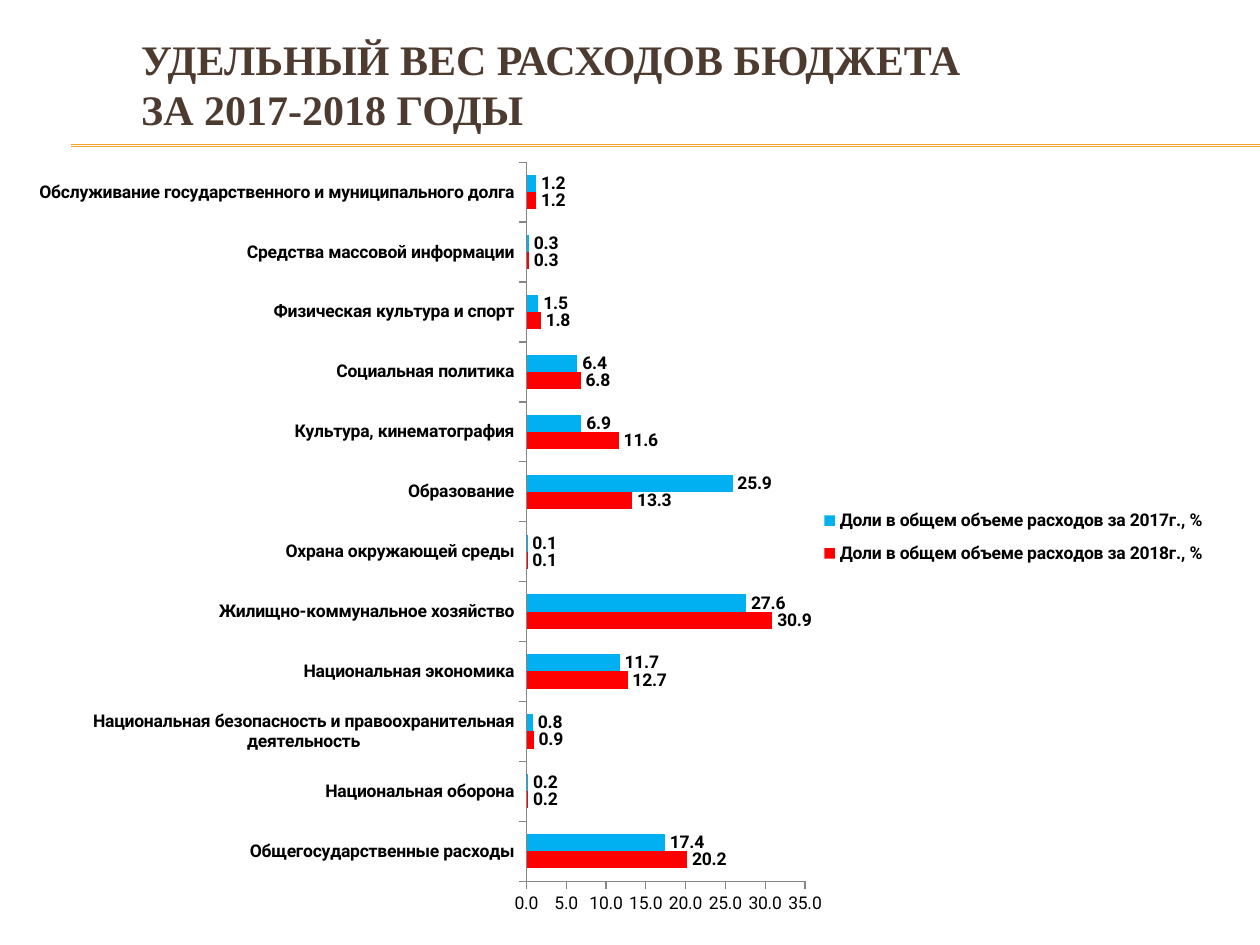
from lxml.etree import SubElement as Sub
from pptx import Presentation
from pptx.chart.data import CategoryChartData as Data
from pptx.dml.color import RGBColor
from pptx.enum.chart import XL_CHART_TYPE as Kind, XL_LABEL_POSITION as Spot
from pptx.enum.chart import XL_LEGEND_POSITION as Side, XL_TICK_MARK as Tick
from pptx.enum.shapes import MSO_CONNECTOR as Wire
from pptx.enum.text import MSO_ANCHOR as Anchor, PP_ALIGN as Align
from pptx.oxml import parse_xml
from pptx.oxml.ns import nsdecls, qn
from pptx.util import Inches, Pt

ROWS = [
    ("Общегосударственные расходы", 20.2, 17.4),
    ("Национальная оборона", 0.2, 0.2),
    ("Национальная безопасность и правоохранительная деятельность", 0.9, 0.8),
    ("Национальная экономика", 12.7, 11.7),
    ("Жилищно-коммунальное хозяйство", 30.9, 27.6),
    ("Охрана окружающей среды", 0.1, 0.1),
    ("Образование", 13.3, 25.9),
    ("Культура, кинематография", 11.6, 6.9),
    ("Социальная политика", 6.8, 6.4),
    ("Физическая культура и спорт", 1.8, 1.5),
    ("Средства массовой информации", 0.3, 0.3),
    ("Обслуживание государственного и муниципального долга", 1.2, 1.2),
]
SERIES = [("2018", "FF0000"), ("2017", "00B0F0")]


def tint(code):
    return RGBColor.from_string(code)


class Page:
    """Holds the style and the slide; lengths are hundredths of its size."""

    head, body = "Times New Roman", "Roboto"
    brown, gold, grey, black = "4E3B30", "F0A22E", "868686", "000000"

    def __init__(self, deck):
        self.deck = deck
        self.slide = deck.slides.add_slide(deck.slide_layouts[5])

    def x(self, part):
        return round(self.deck.slide_width * part / 100)

    def y(self, part):
        return round(self.deck.slide_height * part / 100)

    def box(self, left, top, wide, high):
        return self.x(left), self.y(top), self.x(wide), self.y(high)

    def font(self, font, size, bold=False):
        font.name, font.size, font.bold = self.body, Pt(size), bold
        font.color.rgb = tint(self.black)

    def title(self, text, *area):
        shape = self.slide.shapes.title
        shape.left, shape.top, shape.width, shape.height = self.box(*area)
        frame = shape.text_frame
        frame.text, frame.word_wrap = text, True
        frame.vertical_anchor = Anchor.MIDDLE
        para = frame.paragraphs[0]
        para.alignment = Align.LEFT
        for run in para.runs:
            run.font.name, run.font.size, run.font.bold = self.head, Pt(24), True
            run.font.color.rgb = tint(self.brown)

    def rule(self, left, right, top):
        line = self.slide.shapes.add_connector(
            Wire.STRAIGHT, self.x(left), self.y(top), self.x(right), self.y(top))
        line.line.color.rgb, line.line.width = tint(self.gold), Pt(0.75)
        Sub(line._element.spPr, qn("a:effectLst"))

    def place(self, node, after, inner, *area):
        old = node.find(qn("c:layout"))
        if old is not None:
            node.remove(old)
        target = '<c:layoutTarget val="inner"/>' if inner else ""
        modes = "".join(f'<c:{k}Mode val="edge"/>' for k in "xy")
        sizes = "".join(f'<c:{k} val="{v / 100}"/>' for k, v in zip("xywh", area))
        new = parse_xml(f'<c:layout {nsdecls("c")}><c:manualLayout>{target}'
                        f'{modes}{sizes}</c:manualLayout></c:layout>')
        if after:
            node.find(qn(after)).addnext(new)
        else:
            node.insert(0, new)

    def axis(self, axis, bold):
        axis.has_major_gridlines = False
        axis.major_tick_mark, axis.minor_tick_mark = Tick.OUTSIDE, Tick.NONE
        axis.format.line.color.rgb = tint(self.grey)
        self.font(axis.tick_labels.font, 10, bold)

    def chart(self, rows, series, *area):
        data = Data(number_format="0.0")
        names, *cols = zip(*rows)
        data.categories = names
        for (year, _), vals in zip(series, cols):
            data.add_series(f"Доли в общем объеме расходов за {year}г., %", vals)
        chart = self.slide.shapes.add_chart(
            Kind.BAR_CLUSTERED, *self.box(*area), data).chart
        chart.has_title = False
        self.font(chart.font, 10)
        self.axis(chart.category_axis, True)
        scale = chart.value_axis
        self.axis(scale, False)
        scale.minimum_scale, scale.maximum_scale, scale.major_unit = 0, 35, 5
        scale.tick_labels.number_format = "0.0"
        scale.tick_labels.number_format_is_linked = False
        plot = chart.plots[0]
        plot.gap_width, plot.overlap, plot.vary_by_categories = 150, 0, False
        for bars, (_, code) in zip(plot.series, series):
            bars.format.fill.solid()
            bars.format.fill.fore_color.rgb = tint(code)
            tags = bars.data_labels
            tags.show_value, tags.position = True, Spot.OUTSIDE_END
            tags.number_format, tags.number_format_is_linked = "0.0", False
            self.font(tags.font, 10, True)
        chart.has_legend = True
        key = chart.legend
        key.position, key.include_in_layout = Side.RIGHT, False
        self.font(key.font, 10, True)
        self.place(key._element, "c:legendPos", False, 64, 44.8, 34, 10)
        area = chart._chartSpace.chart.plotArea
        self.place(area, None, True, 41.5, 1.9, 22.6, 91.9)


def main():
    deck = Presentation()
    deck.slide_width, deck.slide_height = Inches(10), Inches(7.5)
    page = Page(deck)
    for top in (15.33, 15.47):
        page.rule(5.6, 100, top)
    page.title("УДЕЛЬНЫЙ ВЕС РАСХОДОВ БЮДЖЕТА\vЗА 2017-2018 ГОДЫ",
               10.2, 2.8, 81.9, 12.13)
    page.chart(ROWS, SERIES, 1.2, 15.6, 97.8, 82.8)
    deck.save("out.pptx")


if __name__ == "__main__":
    main()
